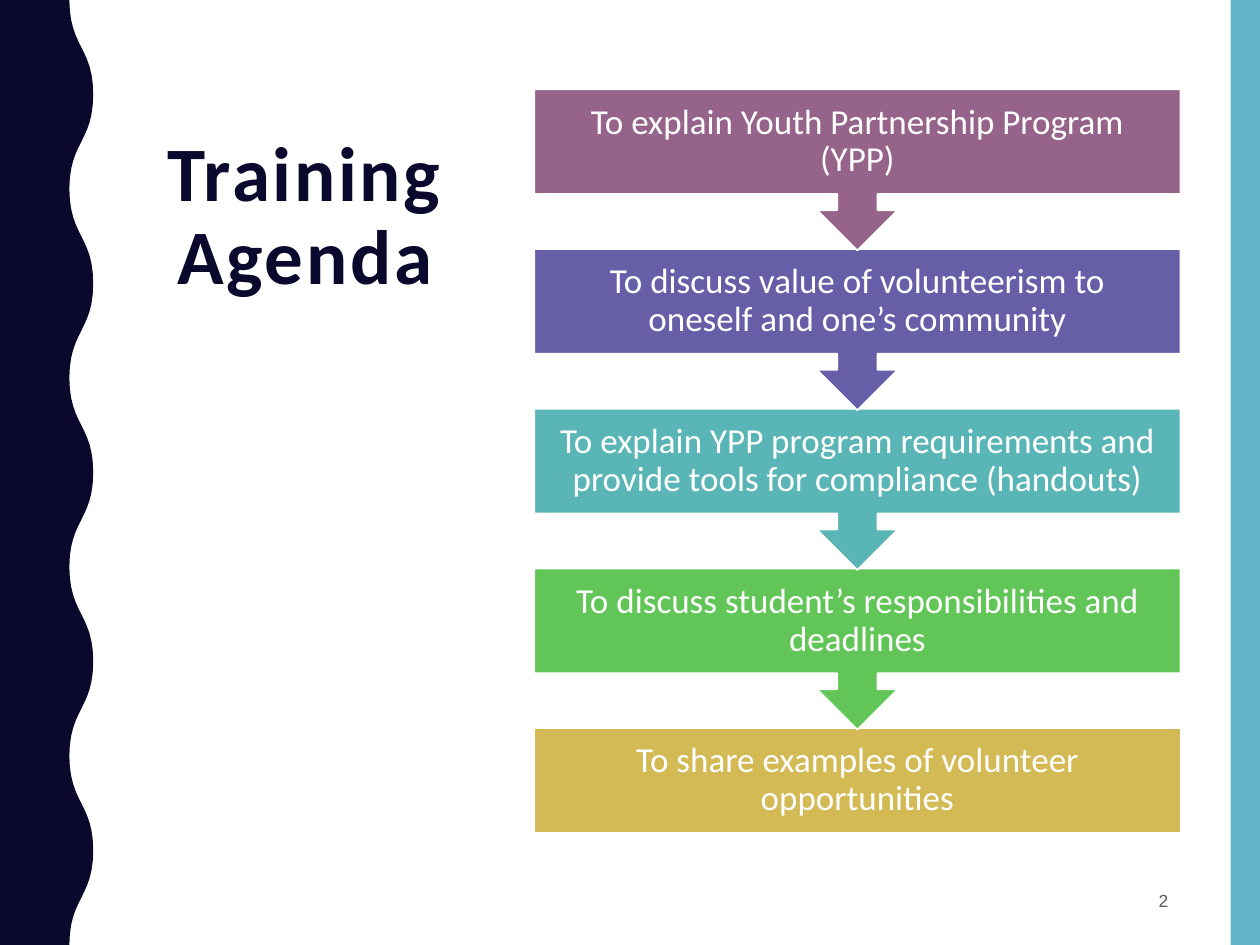
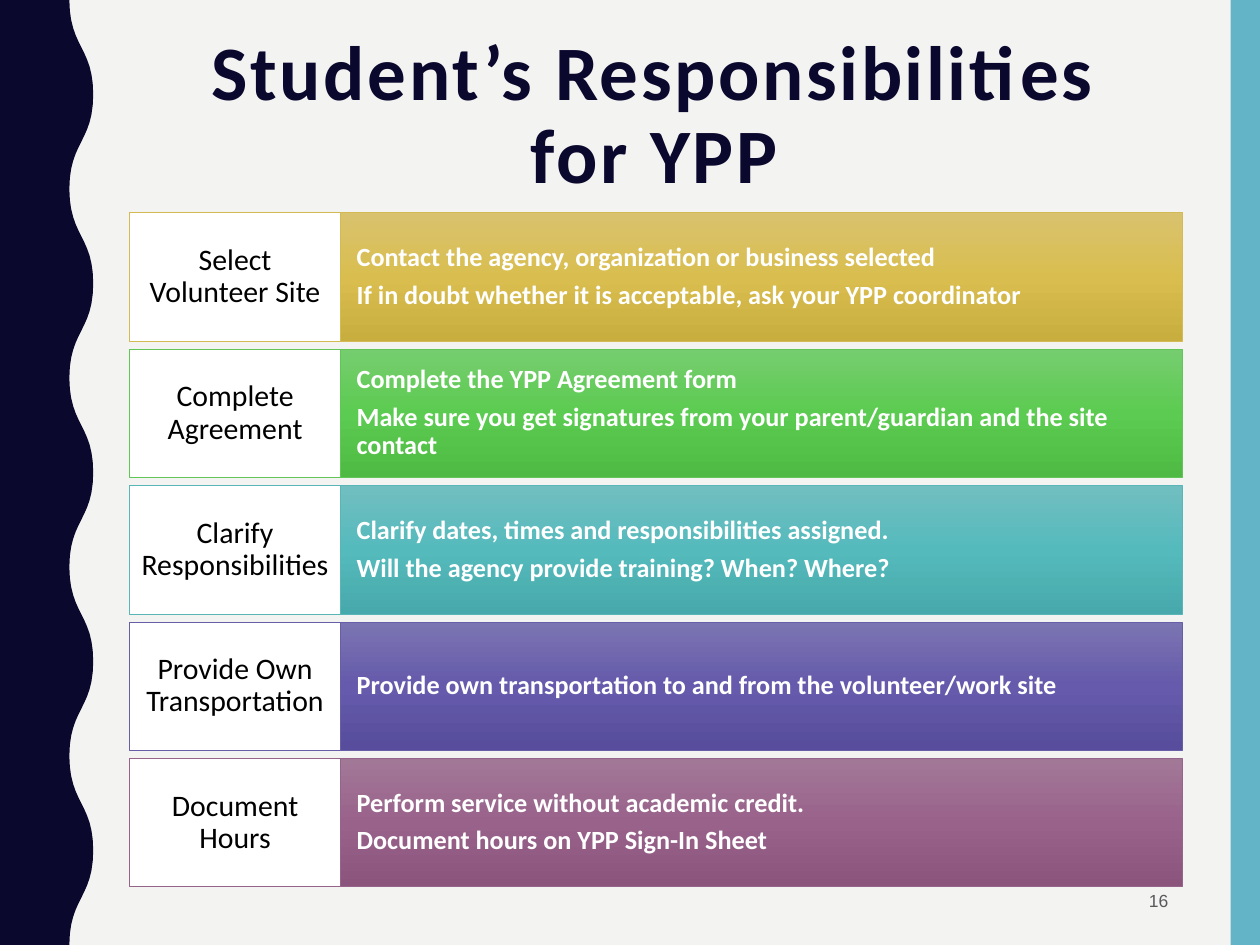
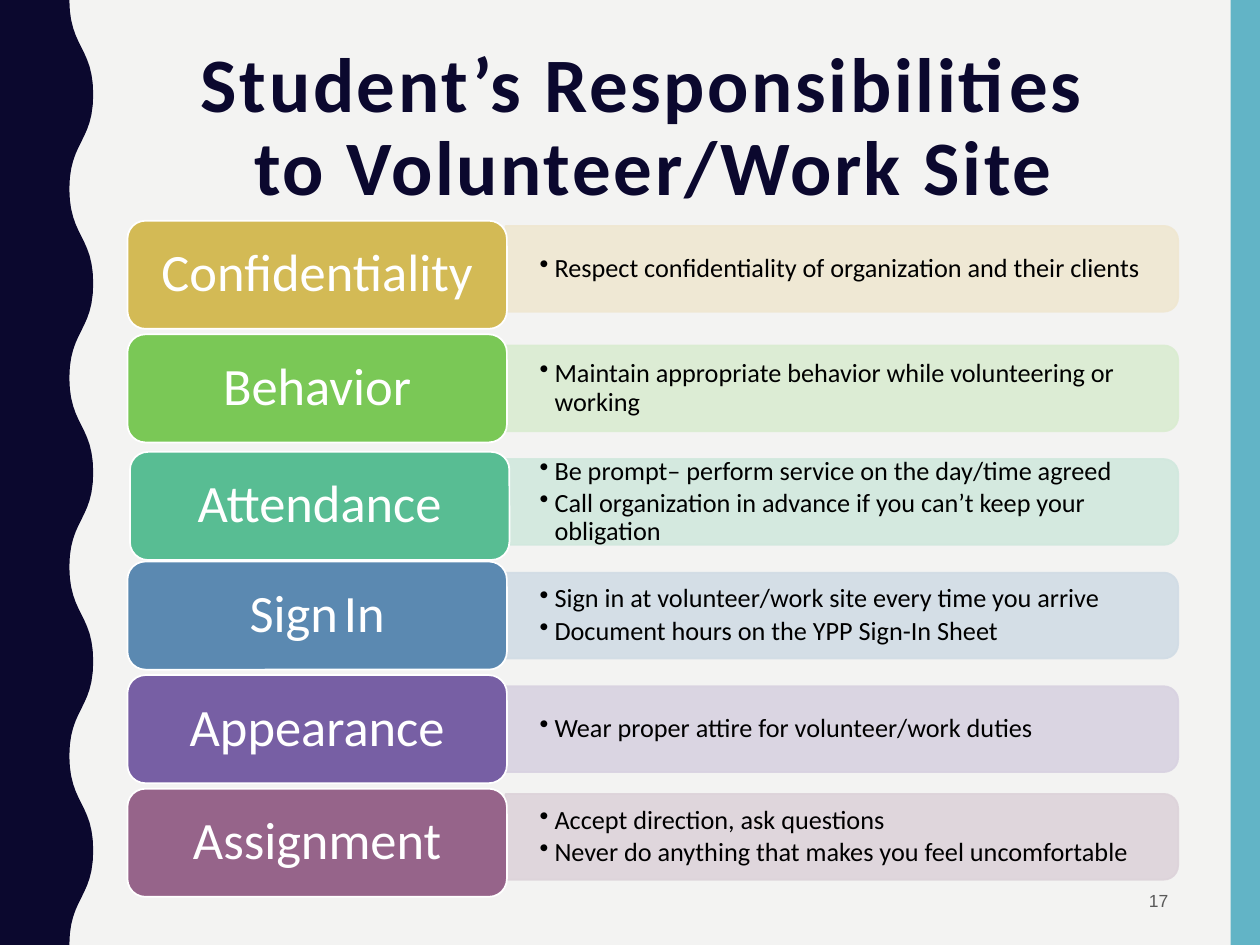
import copy

import pptx
import pptx.dml.color
import pptx.enum.shapes
import pptx.enum.text
import pptx.oxml.ns
import pptx.util
from lxml import etree

Cm, Pt = pptx.util.Cm, pptx.util.Pt
qn = pptx.oxml.ns.qn
SHAPE = pptx.enum.shapes.MSO_SHAPE
ALIGN = pptx.enum.text.PP_ALIGN
MIDDLE = pptx.enum.text.MSO_ANCHOR.MIDDLE


class Theme:
    font, page_font = "Calibri", "Arial"
    navy, aqua = "0B082E", "62B4C6"
    white, black, pale, grey = "FFFFFF", "000000", "F3F3F2", "595959"
    gold, green, teal, violet, plum = "D3BA55", "61C657", "5AB5B7", "675EA8", "96648A"
    title, step, label, note, tab, page = 44, 20, 17, 15, 30, 10


WIDE, HIGH = 25.4, 19.05

# Title, place in cm, page number, background
AGENDA = ("Training Agenda", (2.62, 1.8, 7.06, 5.18), 2, Theme.white)
DUTIES = ("Student’s Responsibilities for YPP", (3.07, 0.41, 20.24, 3.91), 16, Theme.pale)
CONDUCT = ("Student’s Responsibilities \vto Volunteer/Work Site",
           (2.57, 0.53, 21.21, 4.14), 17, Theme.pale)

STEPS = [
    ("To explain Youth Partnership Program (YPP)", Theme.plum),
    ("To discuss value of volunteerism to oneself and one’s community", Theme.violet),
    ("To explain YPP program requirements and provide tools for compliance (handouts)",
     Theme.teal),
    ("To discuss student’s responsibilities and deadlines", Theme.green),
    ("To share examples of volunteer opportunities", Theme.gold),
]

# Label, notes, outline, gradient from top to bottom
ROWS = [
    ("Select Volunteer Site",
     ["Contact the agency, organization or business selected",
      "If in doubt whether it is acceptable, ask your YPP coordinator"],
     Theme.gold, ("D9C26E", "D9BE4F", "C8AD3F")),
    ("Complete Agreement",
     ["Complete the YPP Agreement form",
      "Make sure you get signatures from your parent/guardian and the site contact"],
     Theme.green, ("76CD6F", "5CCB51", "4EBA43")),
    ("Clarify Responsibilities",
     ["Clarify dates, times and responsibilities assigned.",
      "Will the agency provide training? When? Where?"],
     Theme.teal, ("71BEC0", "55BABC", "47A9AB")),
    ("Provide Own Transportation",
     ["Provide own transportation to and from the volunteer/work site"],
     Theme.violet, ("7B74B2", "655AAB", "574D9C")),
    ("Document Hours",
     ["Perform service without academic credit.",
      "Document hours on YPP Sign-In Sheet"],
     Theme.plum, ("A27897", "99628B", "8A547D")),
]

# Label, notes, tab colour, bar colour, tab shift (x, y), bar shift (y)
TABS = [
    ("Confidentiality", ["Respect confidentiality of organization and their clients"],
     Theme.gold, "EFE7D1", (0, 0), -0.12),
    ("Behavior", ["Maintain appropriate behavior while volunteering or working"],
     "7AC856", "DAECD1", (0, 0), 0),
    ("Attendance",
     ["Be prompt– perform service on the day/time agreed",
      "Call organization in advance if you can’t keep your obligation"],
     "58BD93", "D1E8DE", (0.05, 0.08), 0),
    ("Sign In",
     ["Sign in at volunteer/work site every time you arrive",
      "Document hours on the YPP Sign-In Sheet"],
     "5B89B1", "D1DCE5", (0, 0), 0),
    ("Appearance", ["Wear proper attire for volunteer/work duties"],
     "775FA4", "D8D2E1", (0, 0), 0),
    ("Assignment",
     ["Accept direction, ask questions",
      "Never do anything that makes you feel uncomfortable"],
     Theme.plum, "DDD3DA", (0, 0), -0.12),
]


def rgb(code):
    return pptx.dml.color.RGBColor.from_string(code)


def cms(box):
    return [Cm(n) for n in box]


def paint(shape, fill, line=None, width=1):
    shape.shadow.inherit = False
    shape.fill.solid()
    shape.fill.fore_color.rgb = rgb(fill)
    if line:
        shape.line.color.rgb = rgb(line)
        shape.line.width = Pt(width)
    else:
        shape.line.fill.background()


def add_box(slide, kind, box, fill, line=None, width=1):
    shape = slide.shapes.add_shape(kind, *cms(box))
    paint(shape, fill, line, width)
    return shape


def style(run, size, color, bold=False, font=Theme.font):
    run.font.size = Pt(size)
    run.font.color.rgb = rgb(color)
    run.font.bold = bold
    run.font.name = font


def write(shape, lines, size, color, pad=(0.25, 0.13), align=ALIGN.CENTER,
          bold=False, gap=0.35, font=Theme.font, bullet=False):
    """Fill a shape with paragraphs; gap is the space after, as a share of size."""
    frame = shape.text_frame
    frame.word_wrap = True
    frame.vertical_anchor = MIDDLE
    frame.margin_left = frame.margin_right = Cm(pad[0])
    frame.margin_top = frame.margin_bottom = Cm(pad[1])
    frame.text = "\n".join(lines)
    for para in frame.paragraphs:
        para.alignment = align
        para.line_spacing = 0.9
        para.space_after = Pt(size * gap)
        for run in para.runs:
            style(run, size, color, bold, font)
    if bullet:
        for props in shape.element.iter(qn("a:pPr")):
            props.set("marL", str(Cm(0.3)))
            props.set("indent", str(-Cm(0.3)))
            etree.SubElement(props, qn("a:buChar")).set("char", "•")


def shade(shape, colors):
    """Give a shape an evenly spaced gradient from top to bottom."""
    shape.fill.gradient()
    shape.fill.gradient_angle = 270
    stops = next(shape.element.iter(qn("a:gsLst")))
    while len(stops) < len(colors):
        stops.insert(1, copy.deepcopy(stops[0]))
    for i, (stop, color) in enumerate(zip(shape.fill.gradient_stops, colors)):
        stop.color.rgb = rgb(color)
        stop.position = i / (len(colors) - 1)


def fade(shape, percent):
    for color in shape.element.iter(qn("a:srgbClr")):
        etree.SubElement(color, qn("a:alpha")).set("val", str(percent * 1000))


def add_frame(deck, layout):
    """Put the side band and the wavy edge on the layout."""
    slide = deck.slides[0]
    band = add_box(slide, SHAPE.RECTANGLE, (24.81, 0, 0.59, HIGH), Theme.aqua)
    trough, crest, waves, parts = 1.4, 1.88, 10, 12
    half = HIGH / waves
    edge = []
    for wave in range(waves):
        start, end = (trough, crest) if wave % 2 == 0 else (crest, trough)
        for i in range(1, parts + 1):
            t = i / parts
            x = start + (end - start) * (3 * t**2 - 2 * t**3)
            y = half * (wave + 1.5 * t * (1 - t) + t**3)
            edge.append((Cm(x), Cm(y)))
    pen = slide.shapes.build_freeform(0, 0)
    pen.add_line_segments([(Cm(trough), 0)] + edge + [(0, Cm(HIGH))], close=True)
    wavy = pen.convert_to_shape()
    paint(wavy, Theme.navy)
    for shape in (band, wavy):
        layout.shapes.element.append(shape.element)


def add_slide(deck, layout, head):
    text, box, page, back = head
    slide = deck.slides.add_slide(layout)
    slide.background.fill.solid()
    slide.background.fill.fore_color.rgb = rgb(back)
    title = slide.shapes.title
    title.left, title.top, title.width, title.height = cms(box)
    title.text_frame.auto_size = pptx.enum.text.MSO_AUTO_SIZE.NONE
    write(title, [text], Theme.title, Theme.navy, bold=True, gap=0)
    for props in title.element.iter(qn("a:rPr")):
        props.set("spc", "150")
    number = slide.shapes.add_textbox(*cms((17.93, 17.7, 5.87, 0.97)))
    write(number, [str(page)], Theme.page, Theme.grey, align=ALIGN.RIGHT,
          gap=0.6, font=Theme.page_font)
    return slide


def add_steps(slide):
    left, top, width, pitch = 10.77, 1.8, 13.03, 3.22
    last = len(STEPS) - 1
    for i, (text, color) in reversed(list(enumerate(STEPS))):
        kind, high = ((SHAPE.RECTANGLE, 2.11) if i == last
                      else (SHAPE.DOWN_ARROW_CALLOUT, 3.25))
        step = add_box(slide, kind, (left, top + i * pitch, width, high),
                       color, Theme.white)
        write(step, [text], Theme.step, Theme.white, (0.41, 0.41))


def add_rows(slide):
    left, top, split, right = 2.62, 4.29, 6.86, 23.83
    high, pitch = 2.59, 2.75
    for i, (label, notes, color, grades) in enumerate(ROWS):
        y = top + i * pitch
        bar = add_box(slide, SHAPE.RECTANGLE, (split, y, right - split, high),
                      color, color, 0.5)
        shade(bar, grades)
        write(bar, notes, Theme.note, Theme.white, (0.33, 0.66), ALIGN.LEFT, bold=True)
        name = add_box(slide, SHAPE.RECTANGLE, (left, y, split - left, high),
                       Theme.white, color, 0.5)
        write(name, [label], Theme.label, Theme.black, (0.23, 0.25))


def add_tabs(slide):
    left, top, pitch, tab_w, tab_h = 2.57, 4.45, 2.29, 7.65, 2.18
    bar_x, bar_w, bar_h = 10.19, 13.56, 1.73
    note_w, note_h = 13.49, 1.57
    for i, (label, notes, color, tint, (dx, dy), drop) in enumerate(TABS):
        y = top + i * pitch
        mid = y + tab_h / 2 + drop
        bar = add_box(slide, SHAPE.ROUND_2_SAME_RECTANGLE,
                      (bar_x + (bar_w - bar_h) / 2, mid - bar_w / 2, bar_h, bar_w),
                      tint, tint)
        bar.rotation = 90
        fade(bar, 90)
        note = slide.shapes.add_textbox(*cms((bar_x, mid - note_h / 2, note_w, note_h)))
        write(note, notes, Theme.note, Theme.black, (0.69, 0.36), ALIGN.LEFT,
              gap=0.15, bullet=True)
        tab = add_box(slide, SHAPE.ROUNDED_RECTANGLE,
                      (left + dx, y + dy, tab_w, tab_h), color, Theme.white)
        first, space, rest = label.partition(" ")
        write(tab, [first], Theme.tab, Theme.white, (0.3, 0.15))
        if rest:
            para = tab.text_frame.paragraphs[0]
            for text, size in ((space, Theme.tab / 2), (rest, Theme.tab)):
                run = para.add_run()
                run.text = text
                style(run, size, Theme.white)


def main():
    deck = pptx.Presentation()
    deck.slide_width, deck.slide_height = Cm(WIDE), Cm(HIGH)
    layout = deck.slide_layouts[5]
    for head, fill in ((AGENDA, add_steps), (DUTIES, add_rows), (CONDUCT, add_tabs)):
        fill(add_slide(deck, layout, head))
    add_frame(deck, layout)
    deck.save("out.pptx")


if __name__ == "__main__":
    main()
